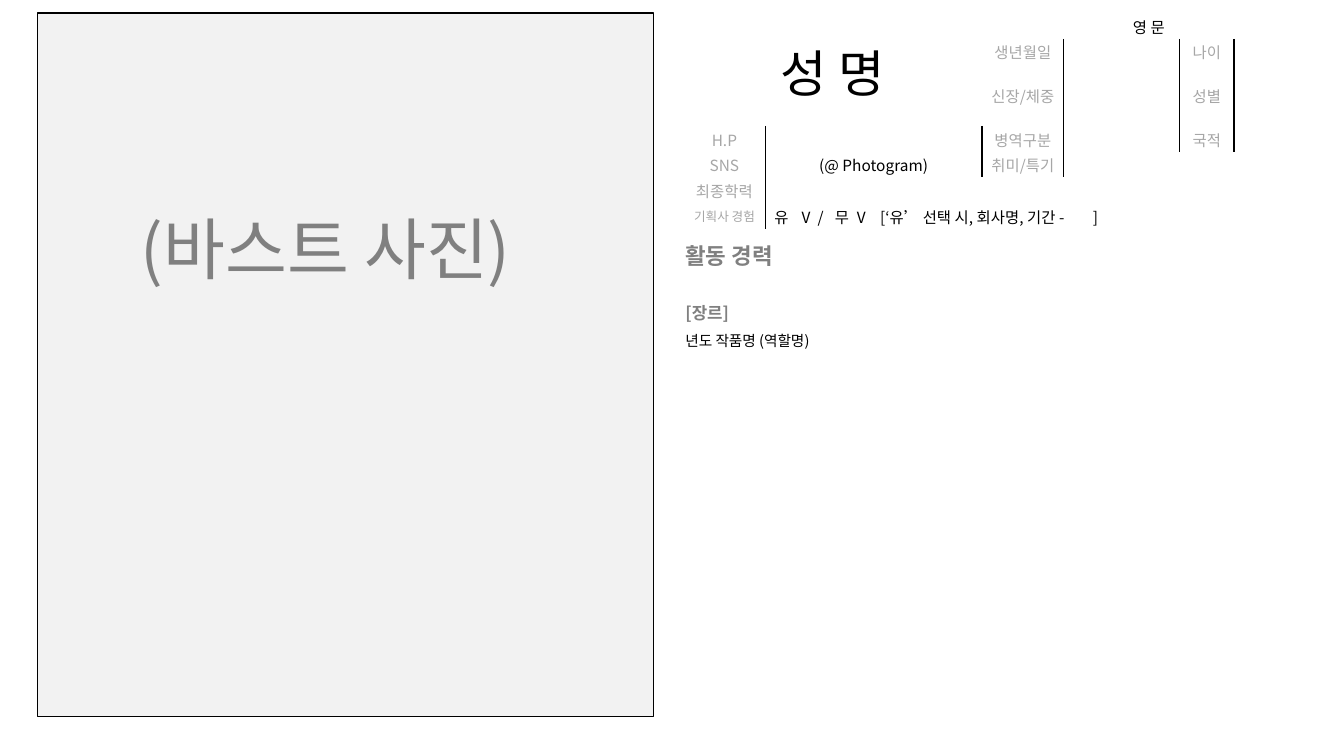
"""Build an actor's profile form with a photo frame, a details table and a career list."""
from dataclasses import dataclass

from lxml import etree
from pptx import Presentation
from pptx import util as u
from pptx.dml.color import RGBColor
from pptx.enum import shapes, text
from pptx.oxml import ns

WIDTH, HEIGHT = u.Inches(13.33), u.Inches(7.5)
COLUMN, ROW = WIDTH / 133.3, HEIGHT / 75
NO_STYLE = "{2D5ABB26-0587-4C30-8999-92F81FD0307C}"


@dataclass(frozen=True)
class Theme:
    font: str = "Noto Sans CJK KR"
    ink: str = "000000"
    heading: str = "808080"
    label: str = "A6A6A6"
    frame: str = "F2F2F2"
    photo_size: float = 48
    name_size: float = 36
    title_size: float = 16
    genre_size: float = 12
    body_size: float = 11
    work_size: float = 10.5
    small_size: float = 9


THEME = Theme()


@dataclass(frozen=True)
class Box:
    left: float
    top: float
    width: float
    height: float

    def emu(self) -> tuple[int, int, int, int]:
        return (round(self.left * COLUMN), round(self.top * ROW),
                round(self.width * COLUMN), round(self.height * ROW))


@dataclass(frozen=True)
class Line:
    words: str
    size: float
    color: str = THEME.heading
    bold: bool = False
    spacing: float = 1
    before: float = 0


@dataclass(frozen=True)
class Field:
    row: int
    col: int
    line: Line
    align: text.PP_ALIGN = text.PP_ALIGN.CENTER


def label(row: int, col: int, words: str, size: float = THEME.body_size) -> Field:
    return Field(row, col, Line(words, size, THEME.label))


PHOTO = Box(3.7, 1.3, 61.1, 69.8)
PHOTO_TEXT = Box(13, 20.1, 47.5, 9.1)
CAREER = Box(67, 23.5, 64.3, 21.1)
DETAILS = Box(67.8, 1.3, 62.7, 21.4)
COL_SHARES = (8.1, 21.5, 8.1, 11.5, 5.4, 8.1)
ROW_SHARES = (2.55, 2.55, 6.1, 2.55, 2.55, 2.55, 2.55)
MERGES = ((0, 0, 2, 1), (0, 2, 0, 5), (4, 3, 4, 5), (5, 1, 5, 5), (6, 1, 6, 5))
AGENCY_TABS = (2.7, 4.3, 6, 8.2, 10.5, 31.6)

PHOTO_LINES = (Line("(바스트 사진)", THEME.photo_size),)
CAREER_LINES = (
    Line("활동 경력", THEME.title_size, bold=True),
    Line("[장르]", THEME.genre_size, bold=True, spacing=1.5, before=17.4),
    Line("년도 작품명 (역할명)", THEME.work_size, THEME.ink, spacing=1.5),
)
LABELS = (
    label(1, 2, "생년월일"), label(1, 4, "나이"),
    label(2, 2, "신장/체중"), label(2, 4, "성별"),
    label(3, 0, "H.P"), label(3, 2, "병역구분"), label(3, 4, "국적"),
    label(4, 0, "SNS"), label(4, 2, "취미/특기"),
    label(5, 0, "최종학력"),
    label(6, 0, "기획사 경험", THEME.small_size),
)
AGENCY = Field(6, 1, Line("유\tV\t/\t무\tV\t[‘유’ 선택 시, 회사명, 기간 -\t]",
                          THEME.body_size, THEME.ink), text.PP_ALIGN.LEFT)
VALUES = (
    Field(0, 0, Line("성 명", THEME.name_size, THEME.ink)),
    Field(0, 2, Line("영 문", THEME.body_size, THEME.ink)),
    Field(4, 1, Line("(@ Photogram)", THEME.body_size, THEME.ink)),
    AGENCY,
)


def write(p, line: Line) -> None:
    p.text = line.words
    p.line_spacing = line.spacing
    p.space_before = u.Pt(line.before)
    for r in p.runs:
        r.font.name = THEME.font
        r.font.size = u.Pt(line.size)
        r.font.bold = line.bold
        r.font.color.rgb = RGBColor.from_string(line.color)
        ea = etree.SubElement(r.font._element, ns.qn("a:ea"))
        ea.set("typeface", THEME.font)


def add_text(s, box: Box, lines: tuple[Line, ...]) -> None:
    tf = s.shapes.add_textbox(*box.emu()).text_frame
    tf.word_wrap = True
    for i, line in enumerate(lines):
        write(tf.add_paragraph() if i else tf.paragraphs[0], line)


def add_frame(s, box: Box) -> None:
    sp = s.shapes.add_shape(shapes.MSO_SHAPE.RECTANGLE, *box.emu())
    sp.shadow.inherit = False
    sp.fill.solid()
    sp.fill.fore_color.rgb = RGBColor.from_string(THEME.frame)
    sp.line.color.rgb = RGBColor.from_string(THEME.ink)
    sp.line.width = u.Pt(1)


def add_border(cell, side: str) -> None:
    ln = etree.Element(ns.qn(f"a:{side}"), w=str(u.Pt(1)))
    fill = etree.SubElement(ln, ns.qn("a:solidFill"))
    etree.SubElement(fill, ns.qn("a:srgbClr"), val=THEME.ink)
    cell._tc.get_or_add_tcPr().insert(0, ln)


def prepare(cell) -> None:
    cell.fill.background()
    cell.vertical_anchor = text.MSO_ANCHOR.MIDDLE
    cell.margin_left = cell.margin_right = cell.margin_top = u.Inches(0.01)
    cell.margin_bottom = 0
    end = etree.SubElement(cell.text_frame.paragraphs[0]._p, ns.qn("a:endParaRPr"))
    end.set("sz", str(THEME.body_size * 100))


def add_tabs(p, stops: tuple[float, ...]) -> None:
    tabs = etree.SubElement(p._p.get_or_add_pPr(), ns.qn("a:tabLst"))
    for stop in stops:
        etree.SubElement(tabs, ns.qn("a:tab"), pos=str(round(stop * COLUMN)), algn="l")


def add_details(s, box: Box) -> None:
    shape = s.shapes.add_table(len(ROW_SHARES), len(COL_SHARES), *box.emu())
    table = shape.table
    table.first_row = table.horz_banding = False
    table._tbl.tblPr.find(ns.qn("a:tableStyleId")).text = NO_STYLE
    for column, share in zip(table.columns, COL_SHARES):
        column.width = round(share * COLUMN)
    for row, share in zip(table.rows, ROW_SHARES):
        row.height = round(share * ROW)
    for cell in table.iter_cells():
        prepare(cell)
    for top, left, bottom, right in MERGES:
        table.cell(top, left).merge(table.cell(bottom, right))
    for field in LABELS + VALUES:
        p = table.cell(field.row, field.col).text_frame.paragraphs[0]
        write(p, field.line)
        p.alignment = field.align
    for field in LABELS:
        add_border(table.cell(field.row, field.col), "lnR")
        add_border(table.cell(field.row, field.col + 1), "lnL")
    agency = table.cell(AGENCY.row, AGENCY.col)
    agency.margin_left = u.Inches(0.09)
    add_tabs(agency.text_frame.paragraphs[0], AGENCY_TABS)


def main() -> None:
    prs = Presentation()
    prs.slide_width, prs.slide_height = WIDTH, HEIGHT
    s = prs.slides.add_slide(prs.slide_layouts[6])
    add_frame(s, PHOTO)
    add_text(s, PHOTO_TEXT, PHOTO_LINES)
    add_text(s, CAREER, CAREER_LINES)
    add_details(s, DETAILS)
    prs.save("out.pptx")


if __name__ == "__main__":
    main()
